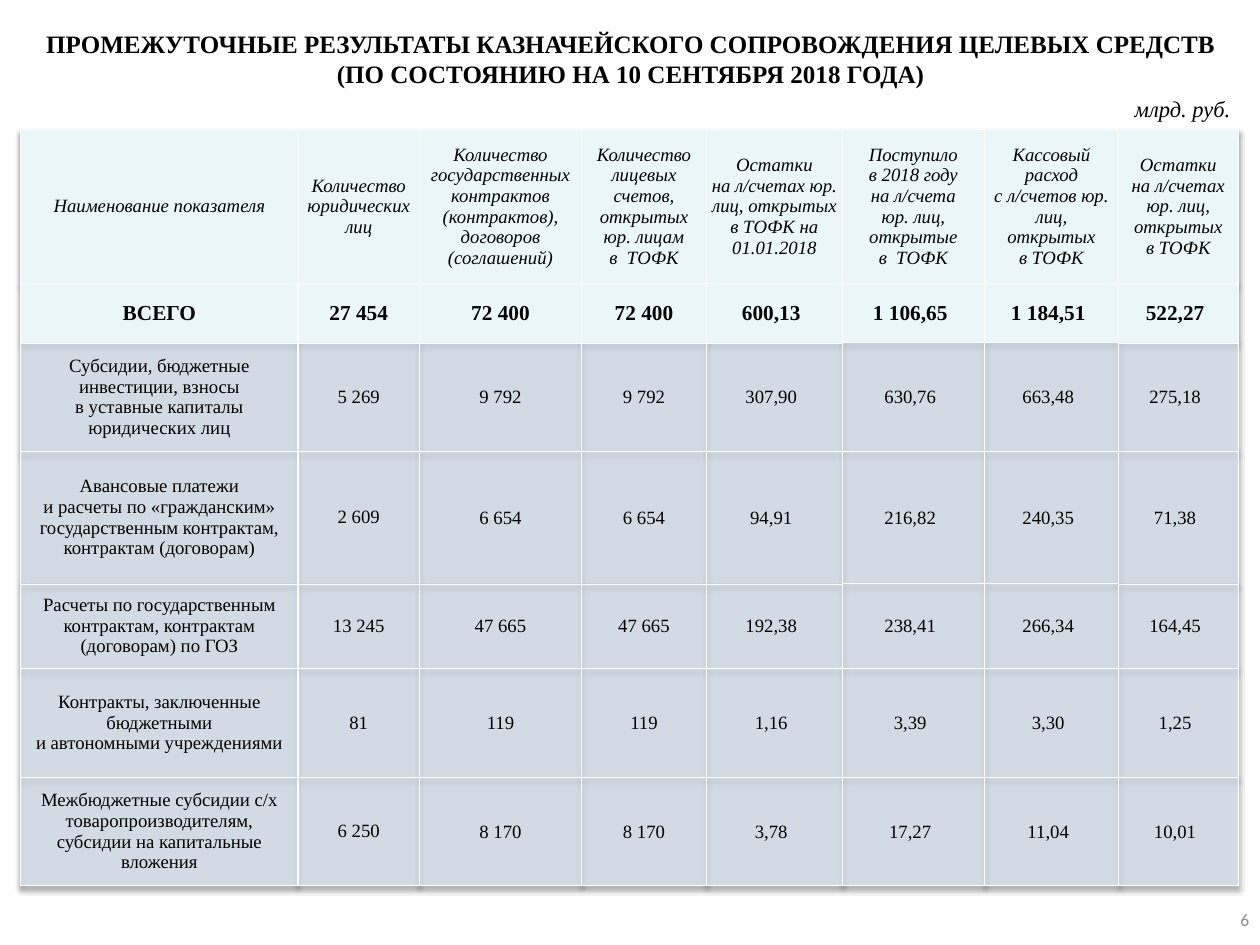
from lxml.etree import SubElement as Sub
from pptx import Presentation
from pptx.dml.color import RGBColor as Rgb
from pptx.enum.text import MSO_ANCHOR as Anchor, MSO_AUTO_SIZE as Auto, PP_ALIGN as Align
from pptx.oxml.ns import qn
from pptx.util import Pt

HUES = {"text": "000000", "page": "8C8C8C", "line": "FFFFFF",
        "head": "EBF6F9", "body": "DEEBF7", "shade": "000000"}
SERIF = "Times New Roman"

COLS = [221.8, 97.2, 129.6, 100, 108.7, 113.7, 107.2, 95.8]
ROWS = [123, 47.5, 87, 105.8, 67.7, 87, 87]
CELLS = [
    ["Наименование показателя",
     "Количество юридических\nлиц",
     "Количество государственных контрактов (контрактов), договоров (соглашений)",
     "Количество лицевых счетов, открытых юр. лицам\nв  ТОФК",
     "Остатки\nна л/счетах юр. лиц, открытых\nв ТОФК на 01.01.2018",
     "Поступило\nв 2018 году\nна л/счета\nюр. лиц, открытые\nв  ТОФК",
     "Кассовый\nрасход\nс л/счетов юр. лиц,\nоткрытых\nв ТОФК",
     "Остатки\nна л/счетах\nюр. лиц, открытых\nв ТОФК"],
    ["ВСЕГО", "27 454", "72 400", "72 400",
     "600,13", "1 106,65", "1 184,51", "522,27"],
    ["Субсидии, бюджетные инвестиции, взносы\nв уставные капиталы юридических лиц",
     "5 269", "9 792", "9 792", "307,90", "630,76", "663,48", "275,18"],
    ["Авансовые платежи\nи расчеты по «гражданским» государственным контрактам, "
     "контрактам (договорам)",
     "2 609", "6 654", "6 654", "94,91", "216,82", "240,35", "71,38"],
    ["Расчеты по государственным контрактам, контрактам (договорам) по ГОЗ",
     "13 245", "47 665", "47 665", "192,38", "238,41", "266,34", "164,45"],
    ["Контракты, заключенные бюджетными\nи автономными учреждениями",
     "81", "119", "119", "1,16", "3,39", "3,30", "1,25"],
    ["Межбюджетные субсидии с/х товаропроизводителям, субсидии на капитальные вложения",
     "6 250", "8 170", "8 170", "3,78", "17,27", "11,04", "10,01"],
]
HEAD = {"size": Pt(15), "italic": True}
TOTAL = {"size": Pt(17), "bold": True}
BODY = {"size": Pt(15)}
THIN, THICK = 0.25, 1


def assign(item, values):
    for name, value in values.items():
        setattr(item, name, value)


def pads(left, top, right, bottom):
    sides = ("left", "top", "right", "bottom")
    return {f"margin_{side}": Pt(pad)
            for side, pad in zip(sides, (left, top, right, bottom))}


def write(frame, text, font, align=Align.CENTER, hue="text"):
    """Put each line of the text in its own paragraph."""
    frame.text = text
    for para in frame.paragraphs:
        para.alignment = align
        for run in para.runs:
            assign(run.font, {"name": SERIF, **font})
            run.font.color.rgb = Rgb.from_string(HUES[hue])


def add_text(slide, box, text, font, form, **style):
    frame = slide.shapes.add_textbox(*map(Pt, box)).text_frame
    write(frame, text, font, **style)
    assign(frame, form)


def add_hue(parent, hue, alpha=None):
    color = Sub(parent, qn("a:srgbClr"), val=HUES[hue])
    if alpha:
        Sub(color, qn("a:alpha"), val=str(alpha * 1000))


def add_shade(table):
    """Give the table a soft shadow that falls downward."""
    effects = Sub(table._tbl.tblPr, qn("a:effectLst"))
    table._tbl.tblPr.insert(0, effects)
    shade = Sub(effects, qn("a:outerShdw"), blurRad=str(Pt(4)), dist=str(Pt(3)),
                dir="5400000", algn="t", rotWithShape="0")
    add_hue(shade, "shade", 40)


def edges(row, col):
    """Return the line widths of a cell: left, right, top, bottom."""
    strong = col in (5, 6)
    if row == 0:
        return (THICK if col == 0 else THIN,
                THICK if col == len(COLS) - 1 else THIN,
                THICK, THICK if strong else THIN)
    last = row == len(ROWS) - 1
    return (THICK, THICK, THICK if strong else THIN,
            THICK if strong or last else THIN)


def insets(row, col):
    if row == 0:
        return pads(3, 4.3, 3, 4.3) if col < 2 else pads(3, 3, 3, 3)
    if col < 2:
        return pads(10, 5, 10, 5)
    return pads(0.7, 0.7, 0.7 if col < 4 else 5.8, 0)


def paint(cell, row, col):
    """Set the borders and the fill of a cell."""
    props = cell._tc.get_or_add_tcPr()
    for side, width in zip("LRTB", edges(row, col)):
        line = Sub(props, qn(f"a:ln{side}"), w=str(Pt(width)))
        add_hue(Sub(line, qn("a:solidFill")), "line")
    fill = Sub(props, qn("a:solidFill"))
    if row < 2:
        add_hue(fill, "head")
    else:
        add_hue(fill, "body", 69)


def add_grid(slide, left, top):
    table = slide.shapes.add_table(
        len(ROWS), len(COLS), Pt(left), Pt(top), Pt(sum(COLS)), Pt(sum(ROWS))).table
    assign(table, {"first_row": False, "horz_banding": False})
    add_shade(table)
    for col, width in zip(table.columns, COLS):
        col.width = Pt(width)
    fonts = [HEAD, TOTAL] + [BODY] * (len(ROWS) - 2)
    for row, (texts, font) in enumerate(zip(CELLS, fonts)):
        table.rows[row].height = Pt(ROWS[row])
        for col, text in enumerate(texts):
            cell = table.cell(row, col)
            write(cell.text_frame, text, font)
            assign(cell, {"vertical_anchor": Anchor.MIDDLE, **insets(row, col)})
            paint(cell, row, col)


def main():
    deck = Presentation()
    assign(deck, {"slide_width": Pt(1008), "slide_height": Pt(756)})
    slide = deck.slides.add_slide(deck.slide_layouts[6])
    wide = {"word_wrap": True, **pads(8.6, 4.3, 8.6, 4.3)}
    add_text(slide, (16.6, 18.7, 975.6, 56.9),
             "ПРОМЕЖУТОЧНЫЕ РЕЗУЛЬТАТЫ КАЗНАЧЕЙСКОГО СОПРОВОЖДЕНИЯ ЦЕЛЕВЫХ СРЕДСТВ\n"
             "(ПО СОСТОЯНИЮ НА 10 СЕНТЯБРЯ 2018 ГОДА)",
             {"size": Pt(20), "bold": True},
             {**wide, "auto_size": Auto.SHAPE_TO_FIT_TEXT})
    add_grid(slide, 16.6, 103.7)
    add_text(slide, (781.2, 715.7, 226.8, 40.3), "6",
             {"name": "Calibri", "size": Pt(14)},
             {**wide, "vertical_anchor": Anchor.MIDDLE},
             align=Align.RIGHT, hue="page")
    add_text(slide, (900.7, 72.7, 92.2, 28.8), "млрд. руб.",
             {"size": Pt(18), "italic": True},
             {"word_wrap": False, "auto_size": Auto.SHAPE_TO_FIT_TEXT,
              **pads(7.2, 3.6, 7.2, 3.6)}, align=Align.LEFT)
    deck.save("out.pptx")


if __name__ == "__main__":
    main()
